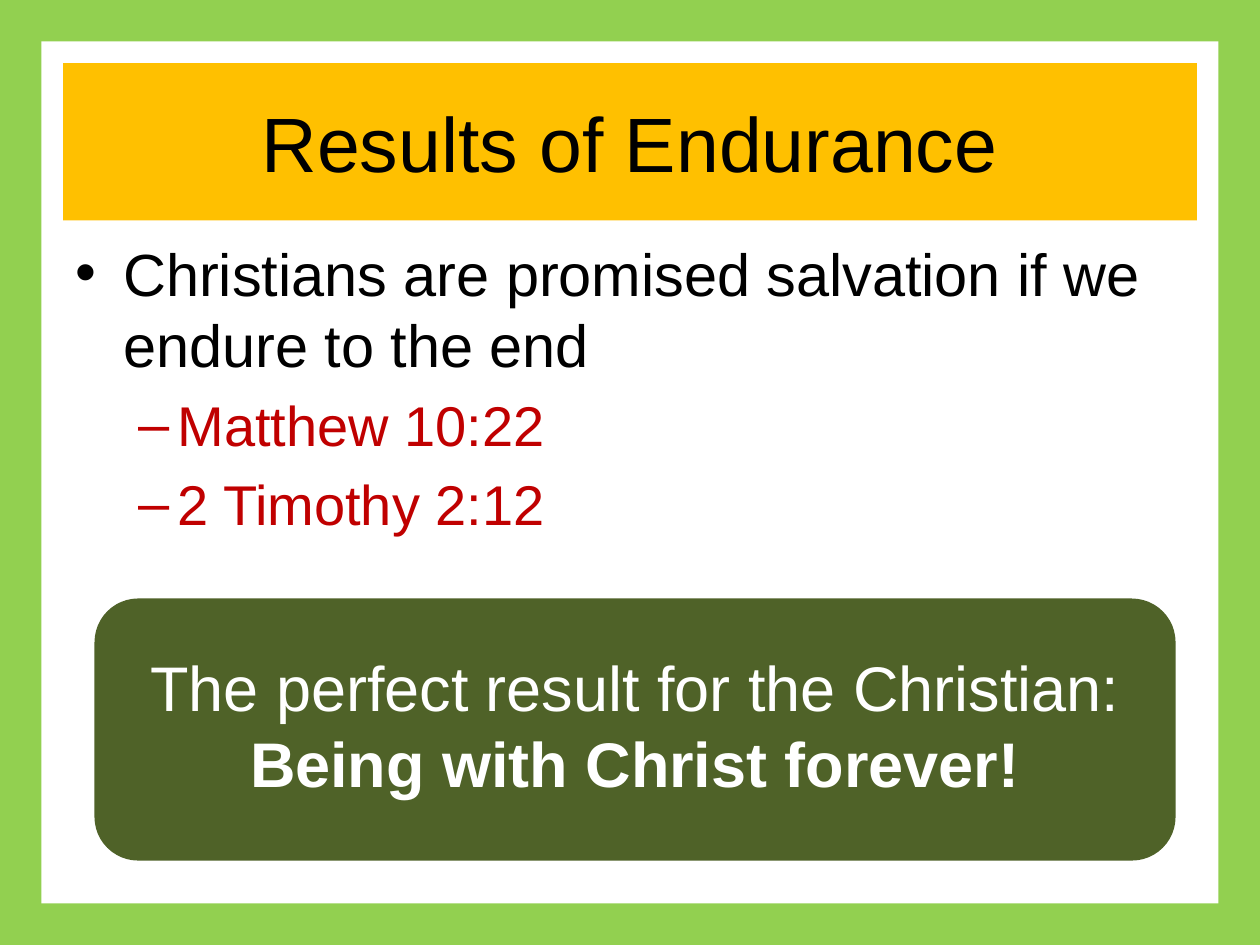
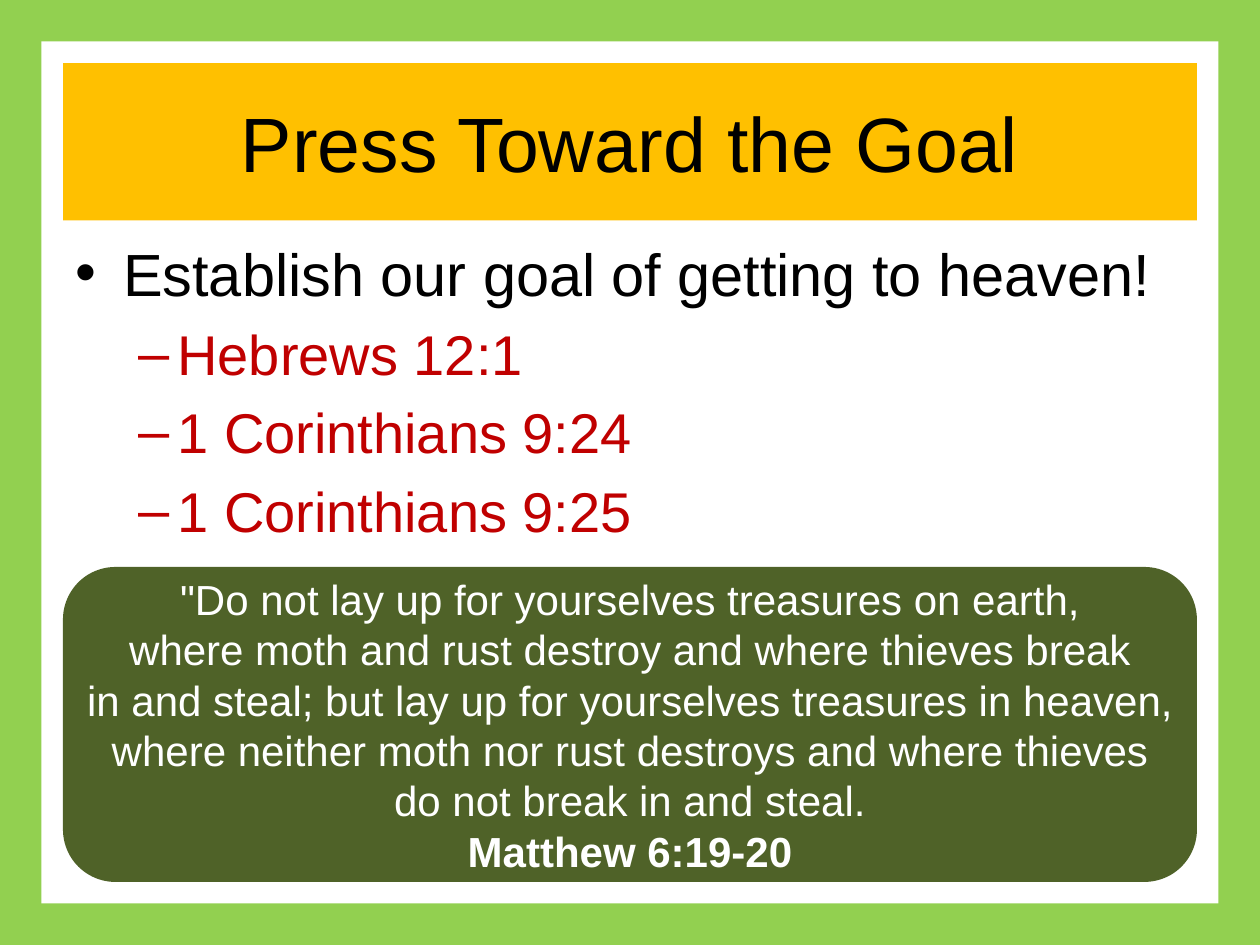
from dataclasses import dataclass
from lxml.etree import SubElement
from pptx import Presentation
from pptx.dml.color import RGBColor
from pptx.enum.shapes import MSO_SHAPE
from pptx.enum.text import MSO_ANCHOR, MSO_AUTO_SIZE, PP_ALIGN
from pptx.oxml.ns import qn
from pptx.util import Inches, Pt


@dataclass(frozen=True)
class Theme:
    font: str = "Arial"
    black: str = "000000"
    white: str = "FFFFFF"
    red: str = "C00000"
    gold: str = "FFC000"
    lime: str = "92D050"
    olive: str = "4F6228"
    title: int = 44
    point: int = 34
    verse: int = 32


theme = Theme()
WIDE, HIGH, EDGE = 10, 7.5, 0.33
frame = [
    (0, 0, EDGE, HIGH),
    (WIDE - EDGE, 0, EDGE, HIGH),
    (0, 0, WIDE, EDGE),
    (0, HIGH - EDGE, WIDE, EDGE),
]

pages = [
    {
        "title": "Results of Endurance",
        "point": "Christians are promised salvation if we endure to the end",
        "verses": ["Matthew 10:22", "2 Timothy 2:12"],
        "panel": (0.75, 4.75, 8.58, 2.08),
        "quote": (1, 5.1, 8.08, 1.31),
        "size": 36,
        "lines": ["The perfect result for the Christian:"],
        "close": "Being with Christ forever!",
    },
    {
        "title": "Press Toward the Goal",
        "point": "Establish our goal of getting to heaven!",
        "verses": ["Hebrews 12:1", "1 Corinthians 9:24", "1 Corinthians 9:25"],
        "panel": (0.5, 4.5, 9, 2.5),
        "quote": (0.5, 4.5, 9, 2.52),
        "size": 24,
        "lines": [
            '"Do not lay up for yourselves treasures on earth,',
            "where moth and rust destroy and where thieves break",
            "in and steal; but lay up for yourselves treasures in heaven, "
            "where neither moth nor rust destroys and where thieves",
            "do not break in and steal.",
        ],
        "close": "Matthew 6:19-20",
    },
]


def add_text(para, text, size, color, bold=False):
    run = para.add_run()
    run.text = text
    run.font.name = theme.font
    run.font.size = Pt(size)
    run.font.bold = bold
    run.font.color.rgb = RGBColor.from_string(color)


def add_block(slide, kind, box, color):
    block = slide.shapes.add_shape(kind, *map(Inches, box))
    block.shadow.inherit = False
    block.fill.solid()
    block.fill.fore_color.rgb = RGBColor.from_string(color)
    block.line.fill.background()


deck = Presentation()
deck.slide_width, deck.slide_height = Inches(WIDE), Inches(HIGH)

for page in pages:
    slide = deck.slides.add_slide(deck.slide_layouts[5])

    title = slide.shapes.title
    title.left, title.top = Inches(0.5), Inches(0.5)
    title.width, title.height = Inches(9), Inches(1.25)
    title.fill.solid()
    title.fill.fore_color.rgb = RGBColor.from_string(theme.gold)
    title.text_frame.vertical_anchor = MSO_ANCHOR.MIDDLE
    para = title.text_frame.paragraphs[0]
    para.alignment = PP_ALIGN.CENTER
    add_text(para, page["title"], theme.title, theme.black)

    body = slide.shapes.add_textbox(*map(Inches, (0.5, 1.83, 9, 2.7))).text_frame
    body.word_wrap = True
    items = [(page["point"], 0)] + [(verse, 1) for verse in page["verses"]]
    for text, level in items:
        para = body.add_paragraph() if level else body.paragraphs[0]
        para.level = level
        left, hang, mark, size, color = (
            (0.81, 0.31, "–", theme.verse, theme.red) if level
            else (0.38, 0.38, "•", theme.point, theme.black)
        )
        props = para._p.get_or_add_pPr()
        props.set("marL", str(Inches(left)))
        props.set("indent", str(-Inches(hang)))
        space = SubElement(props, qn("a:spcBef"))
        SubElement(space, qn("a:spcPct"), val="20000")
        SubElement(props, qn("a:buFont"), typeface=theme.font)
        SubElement(props, qn("a:buChar"), char=mark)
        add_text(para, text, size, color)

    for box in frame:
        add_block(slide, MSO_SHAPE.RECTANGLE, box, theme.lime)

    add_block(slide, MSO_SHAPE.ROUNDED_RECTANGLE, page["panel"], theme.olive)
    quote = slide.shapes.add_textbox(*map(Inches, page["quote"])).text_frame
    quote.word_wrap = True
    quote.auto_size = MSO_AUTO_SIZE.SHAPE_TO_FIT_TEXT
    para = quote.paragraphs[0]
    para.alignment = PP_ALIGN.CENTER
    for count, line in enumerate(page["lines"]):
        if count:
            para.add_line_break()
        add_text(para, line, page["size"], theme.white)
    para = quote.add_paragraph()
    para.alignment = PP_ALIGN.CENTER
    add_text(para, page["close"], page["size"], theme.white, bold=True)

deck.save("out.pptx")
